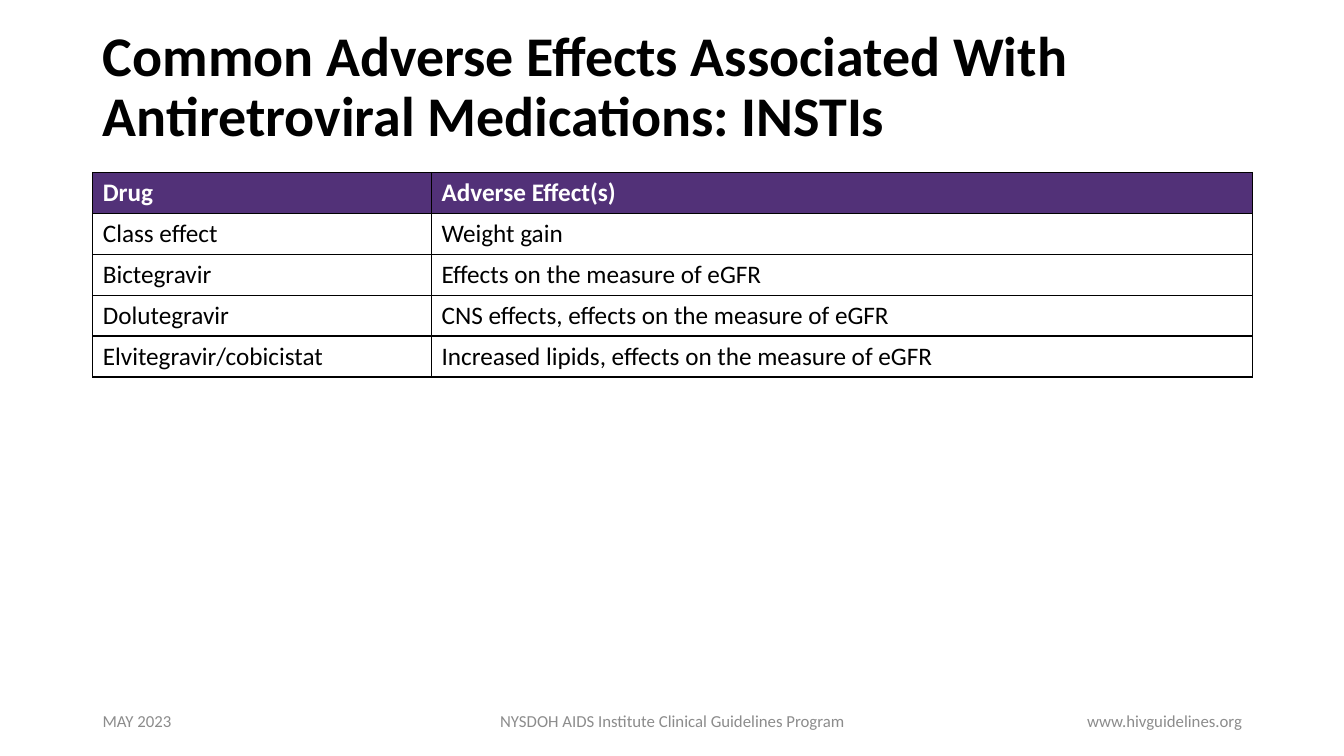
from lxml import etree
from pptx import Presentation
from pptx.dml.color import RGBColor
from pptx.enum.text import MSO_ANCHOR, PP_ALIGN
from pptx.oxml import ns
from pptx.util import Inches, Pt

BLACK = RGBColor(0x00, 0x00, 0x00)
WHITE = RGBColor(0xFF, 0xFF, 0xFF)
GREY = RGBColor(0x8C, 0x8C, 0x8C)
PURPLE = RGBColor(0x52, 0x31, 0x78)

TITLE = "Common Adverse Effects Associated With Antiretroviral Medications: INSTIs"
EFFECTS = [
    ("Drug", "Adverse Effect(s)"),
    ("Class effect", "Weight gain"),
    ("Bictegravir", "Effects on the measure of eGFR"),
    ("Dolutegravir", "CNS effects, effects on the measure of eGFR"),
    ("Elvitegravir/cobicistat", "Increased lipids, effects on the measure of eGFR"),
]
FOOTERS = [  # text, left, width, alignment
    ("MAY 2023", 0.92, 3, PP_ALIGN.LEFT),
    ("NYSDOH AIDS Institute Clinical Guidelines Program", 4.42, 4.5, PP_ALIGN.CENTER),
    ("www.hivguidelines.org", 9.42, 3, PP_ALIGN.RIGHT),
]
LEFT = 0.92
COL_WIDTHS = (3.36, 8.14)
ROW_HEIGHT = 0.406


def write(tf, text, size, color, bold=False, align=PP_ALIGN.LEFT):
    p = tf.paragraphs[0]
    p.alignment = align
    r = p.add_run()
    r.text = text
    r.font.color.rgb = color
    for name, value in {"name": "Calibri", "size": Pt(size), "bold": bold}.items():
        setattr(r.font, name, value)
    return p


def add_borders(cell):
    tc_pr = cell._tc.get_or_add_tcPr()
    for side in ("lnL", "lnR", "lnT", "lnB"):
        ln = etree.SubElement(tc_pr, ns.qn(f"a:{side}"), w=str(Pt(1)))
        fill = etree.SubElement(ln, ns.qn("a:solidFill"))
        etree.SubElement(fill, ns.qn("a:srgbClr"), val=str(BLACK))


prs = Presentation()
prs.slide_width, prs.slide_height = Inches(13.33), Inches(7.5)
s = prs.slides.add_slide(prs.slide_layouts[5])

title = s.shapes.title
title.left, title.top = Inches(LEFT), Inches(0.15)
title.width, title.height = Inches(10.63), Inches(1.45)
title.text_frame.vertical_anchor = MSO_ANCHOR.MIDDLE
write(title.text_frame, TITLE, 40, BLACK, bold=True).line_spacing = 0.9

for text, left, width, align in FOOTERS:
    tf = s.shapes.add_textbox(Inches(left), Inches(6.95), Inches(width), Inches(0.4)).text_frame
    tf.word_wrap = True
    tf.vertical_anchor = MSO_ANCHOR.MIDDLE
    write(tf, text, 12, GREY, align=align)

table = s.shapes.add_table(
    len(EFFECTS), len(COL_WIDTHS), Inches(LEFT), Inches(1.71),
    Inches(sum(COL_WIDTHS)), Inches(ROW_HEIGHT * len(EFFECTS))).table
table.horz_banding = False
for column, width in zip(table.columns, COL_WIDTHS):
    column.width = Inches(width)
for i, row in enumerate(EFFECTS):
    header = i == 0
    for j, text in enumerate(row):
        cell = table.cell(i, j)
        add_borders(cell)
        if header:
            cell.fill.solid()
            cell.fill.fore_color.rgb = PURPLE
        else:
            cell.fill.background()
        write(cell.text_frame, text, 18, WHITE if header else BLACK, bold=header)

prs.save("out.pptx")
